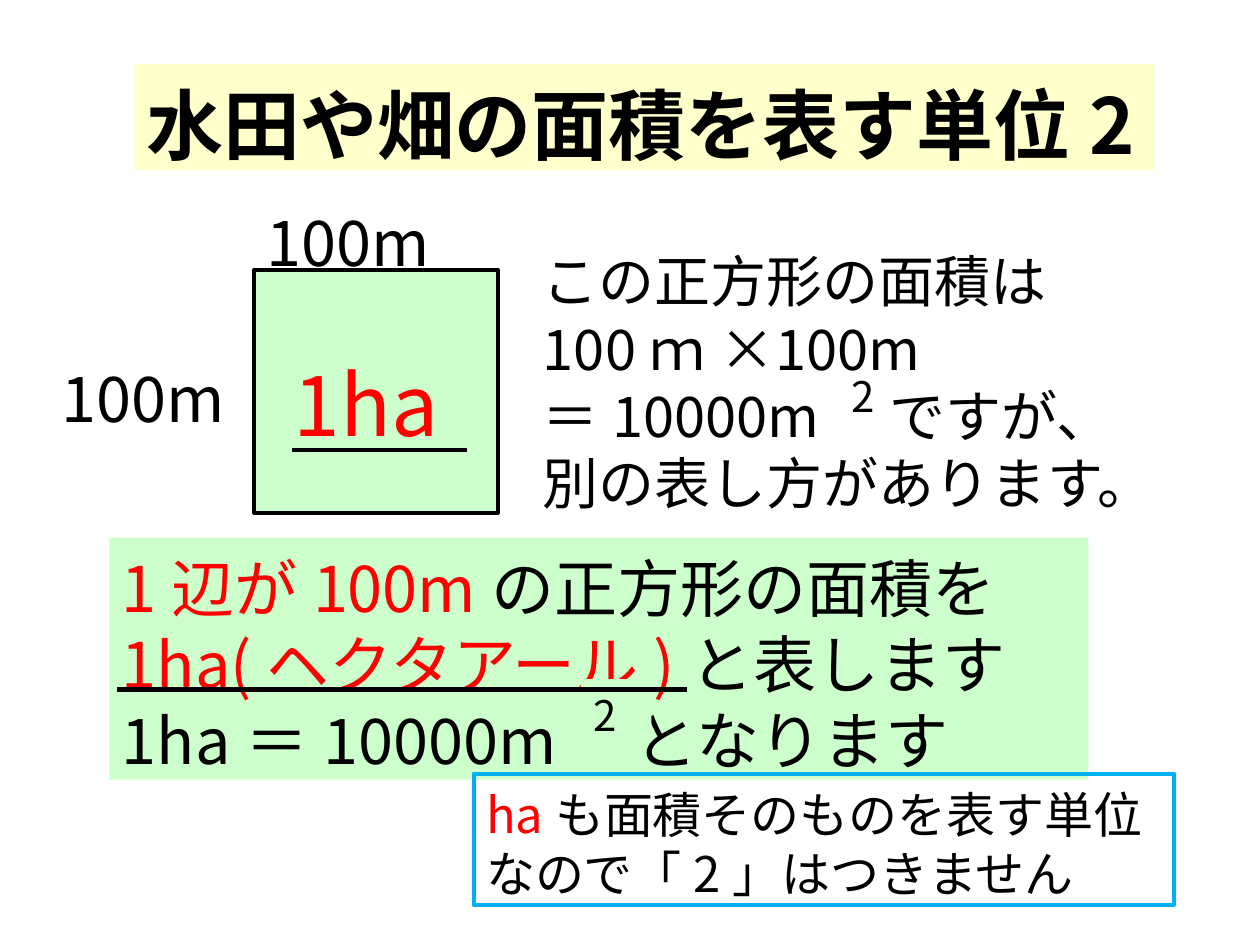
from dataclasses import dataclass

from lxml.etree import SubElement
from pptx import Presentation
from pptx.dml.color import RGBColor
from pptx.enum.shapes import MSO_CONNECTOR, MSO_SHAPE
from pptx.enum.text import MSO_ANCHOR, MSO_AUTO_SIZE, PP_ALIGN
from pptx.oxml.ns import qn
from pptx.util import Pt


@dataclass(frozen=True)
class Theme:
    font: str = "Noto Sans CJK JP"
    black: str = "000000"
    red: str = "FF0000"
    green: str = "CCFFCC"
    yellow: str = "FFFFCC"
    blue: str = "00B0F0"
    title: int = 44
    unit: int = 48
    label: int = 36
    body: int = 32
    note: int = 28
    exponent: int = 24
    line: float = 2.25
    thick: float = 3
    inset_x: float = 7.2
    inset_y: float = 3.6
    line_height: float = 1.2  # line pitch, in type sizes
    first_drop: float = 0.09  # extra room above the first line, in type sizes


class SlideBuilder:
    def __init__(self, slide, theme):
        self.slide = slide
        self.theme = theme

    def set_text(self, shape, paragraphs, size, bold=False):
        """Fill a shape; each paragraph is a list of (text, colour) spans."""
        theme, frame = self.theme, shape.text_frame
        frame.word_wrap = True
        frame.auto_size = MSO_AUTO_SIZE.NONE
        frame.vertical_anchor = MSO_ANCHOR.TOP
        frame.margin_left = frame.margin_right = Pt(theme.inset_x)
        frame.margin_top = Pt(theme.inset_y + theme.first_drop * size)
        frame.margin_bottom = Pt(theme.inset_y)
        for index, spans in enumerate(paragraphs):
            para = frame.add_paragraph() if index else frame.paragraphs[0]
            para.alignment = PP_ALIGN.LEFT
            para.line_spacing = Pt(theme.line_height * size)
            para.space_before = Pt(0)
            para.font.size = Pt(size)
            para.font.bold = bold
            para.font.name = theme.font
            defaults = para._p.pPr.find(qn("a:defRPr"))
            SubElement(defaults, qn("a:ea"), typeface=theme.font)
            for text, colour in spans:
                span = para.add_run()
                span.text = text
                span.font.color.rgb = RGBColor.from_string(colour)

    def title(self, text, left, top, width, height):
        box = self.slide.shapes.title
        box.left, box.top, box.width, box.height = map(Pt, (left, top, width, height))
        box.fill.solid()
        box.fill.fore_color.rgb = RGBColor.from_string(self.theme.yellow)
        self.set_text(box, [[(text, self.theme.black)]], self.theme.title, bold=True)

    def text(self, paragraphs, size, left, top, width, height):
        box = self.slide.shapes.add_textbox(*map(Pt, (left, top, width, height)))
        self.set_text(box, paragraphs, size)

    def panel(self, left, top, width, height, fill=None, line=None, group=None):
        shapes = (group or self.slide).shapes
        box = shapes.add_shape(MSO_SHAPE.RECTANGLE, *map(Pt, (left, top, width, height)))
        box.shadow.inherit = False
        if fill:
            box.fill.solid()
            box.fill.fore_color.rgb = RGBColor.from_string(fill)
        else:
            box.fill.background()
        if line:
            box.line.color.rgb = RGBColor.from_string(line)
            box.line.width = Pt(self.theme.line)
        else:
            box.line.fill.background()
        return box

    def underline(self, left, right, top, width):
        line = self.slide.shapes.add_connector(
            MSO_CONNECTOR.STRAIGHT, *map(Pt, (left, top, right, top)))
        line.line.color.rgb = RGBColor.from_string(self.theme.black)
        line.line.width = Pt(width)
        SubElement(line._element.spPr, qn("a:effectLst"))


def main():
    theme = Theme()
    black, red = theme.black, theme.red
    deck = Presentation()
    deck.slide_width, deck.slide_height = Pt(720), Pt(540)
    page = SlideBuilder(deck.slides.add_slide(deck.slide_layouts[5]), theme)

    page.title("水田や畑の面積を表す単位2", 76.5, 36.7, 583.2, 60.5)

    # Explanation beside the square
    explanation = ["この正方形の面積は", "100ｍ×100m", "＝10000m　ですが、別の表し方があります。"]
    page.text([[(line, black)] for line in explanation],
              theme.body, 303.1, 134.6, 367.9, 162.7)
    exponent = [[("2", black)]]
    page.text(exponent, theme.exponent, 479.5, 205.9, 40.3, 36)

    # Square with its side lengths
    page.panel(145.4, 154.1, 139, 139, theme.green, black)
    for left, top in ((145.4, 109.4), (28.1, 198.7)):
        page.text([[("100m", black)]], theme.label, left, top, 125.3, 51.1)

    # Definition with its raised exponent
    definition = page.slide.shapes.add_group_shape()
    box = page.panel(62.6, 307.4, 559.4, 138.2, theme.green, group=definition)
    page.set_text(box, [
        [("1辺が100m", red), ("の正方形の面積を", black),
         ("1ha(ヘクタアール)", red), ("と表します", black)],
        [("1ha＝10000m　となります", black)],
    ], theme.label)
    box = page.panel(331.9, 388.1, 40.3, 36, theme.green, group=definition)
    page.set_text(box, exponent, theme.exponent)

    # Unit name inside the square
    page.text([[("1ha", red)]], theme.unit, 160.6, 193.7, 116.6, 65.5)

    # Note on the unit
    box = page.panel(270.7, 442.1, 400.3, 74.9, line=theme.blue)
    page.set_text(box, [
        [("ha", red), ("も面積そのものを表す単位", black)],
        [("なので「2」はつきません", black)],
    ], theme.note)

    # Underlines for the unit
    page.underline(167, 267.1, 257, theme.line)
    page.underline(67, 392.4, 393.8, theme.thick)

    deck.save("out.pptx")


if __name__ == "__main__":
    main()
